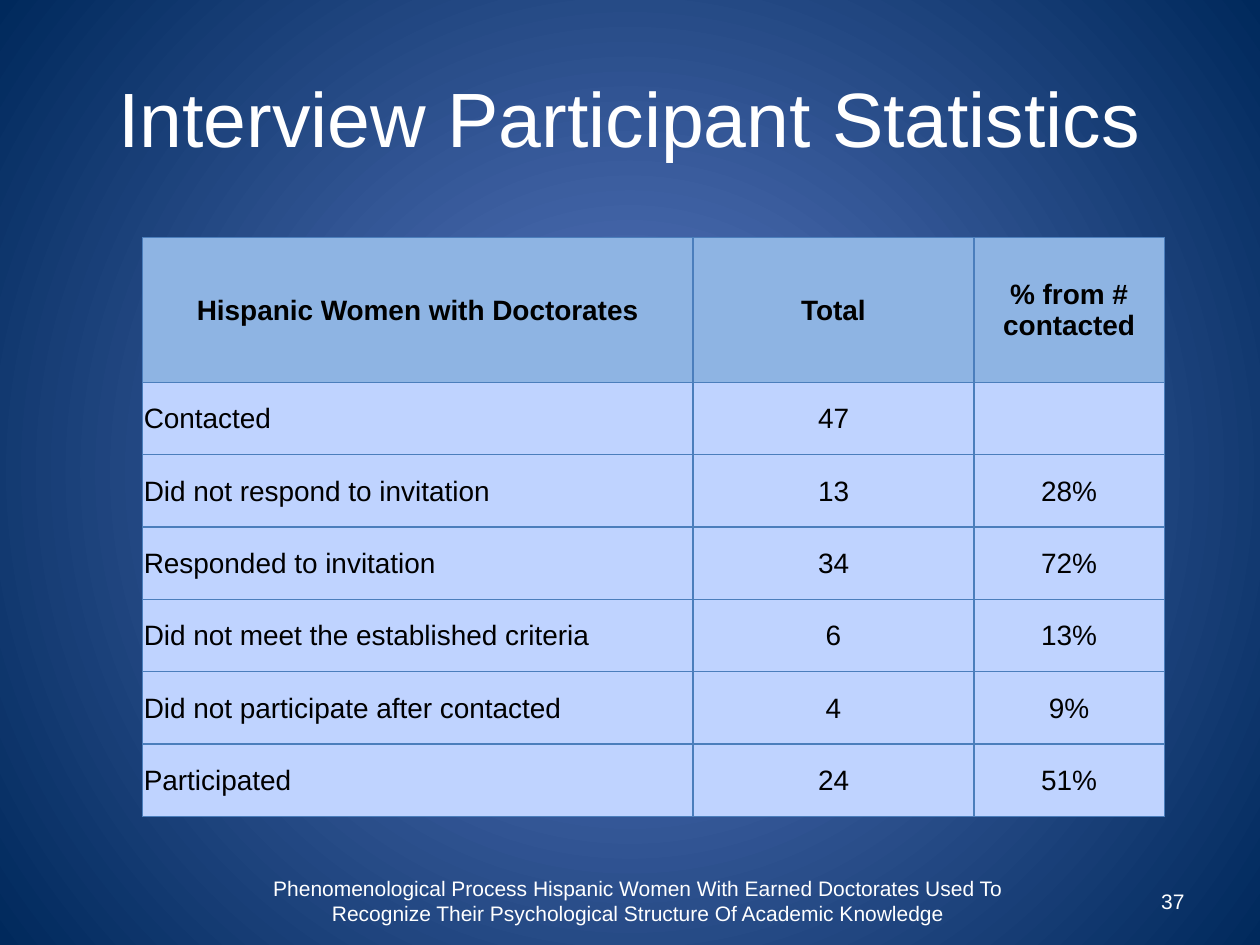
import pptx
import pptx.util
import pptx.dml.color
import pptx.enum.text
import pptx.oxml
import pptx.oxml.ns
import lxml.etree

Pt = pptx.util.Pt
qn = pptx.oxml.ns.qn
ALIGN = pptx.enum.text.PP_ALIGN
MIDDLE = pptx.enum.text.MSO_ANCHOR.MIDDLE

COLORS = {
    "glow": "5E7CC5", "edge": "00295C", "text": "FFFFFF", "ink": "000000",
    "head": "8EB4E3", "body": "BFD3FF", "rule": "4B7EBC",
}
ROWS = [
    ("Hispanic Women with Doctorates", "Total", "% from # contacted"),
    ("Contacted", "47", ""),
    ("Did not respond to invitation", "13", "28%"),
    ("Responded to invitation", "34", "72%"),
    ("Did not meet the established criteria", "6", "13%"),
    ("Did not participate after contacted", "4", "9%"),
    ("Participated", "24", "51%"),
]
WIDTHS = (314.6, 160.6, 108.7)
HEAD, ROW = 82.8, 41.35


def rgb(name):
    return pptx.dml.color.RGBColor.from_string(COLORS[name])


def place(item, box):
    for key, val in zip(("left", "top", "width", "height"), box):
        setattr(item, key, Pt(val))


def write(frame, text, size, color, align, bold=False):
    frame.word_wrap = True
    frame.vertical_anchor = MIDDLE
    par = frame.paragraphs[0]
    par.alignment = align
    run = par.add_run()
    run.text = text
    form = {"name": "Arial", "size": Pt(size), "bold": bold}
    for key, val in form.items():
        setattr(run.font, key, val)
    run.font.color.rgb = rgb(color)


def paint(slide):
    # Radial glow from the centre of the slide
    fill = slide.background.fill
    fill.gradient()
    for stop, (pos, name) in zip(fill.gradient_stops, ((0, "glow"), (1, "edge"))):
        stop.position = pos
        stop.color.rgb = rgb(name)
    grad = next(slide.element.iter(qn("a:gradFill")))
    grad.remove(grad.find(qn("a:lin")))
    shade = lxml.etree.SubElement(grad, qn("a:path"), {"path": "circle"})
    sides = dict.fromkeys("ltrb", "50000")
    lxml.etree.SubElement(shade, qn("a:fillToRect"), sides)


def add_title(slide, box):
    title = slide.shapes.title
    place(title, box)
    write(title.text_frame, "Interview Participant Statistics", 44, "text", ALIGN.CENTER)


def add_note(slide, box, text, align):
    note = slide.shapes.add_textbox(*map(Pt, box))
    write(note.text_frame, text, 12, "text", align)


def rule(cell):
    # Border lines come before the fill in the cell properties
    props = cell._tc.get_or_add_tcPr()
    for spot, side in enumerate("LRTB"):
        line = pptx.oxml.parse_xml(
            f'<a:ln{side} {pptx.oxml.ns.nsdecls("a")} w="9525"><a:solidFill>'
            f'<a:srgbClr val="{COLORS["rule"]}"/></a:solidFill></a:ln{side}>')
        props.insert(spot, line)


def add_stats(slide, box):
    table = slide.shapes.add_table(len(ROWS), len(WIDTHS), *map(Pt, box)).table
    for col, width in zip(table.columns, WIDTHS):
        col.width = Pt(width)
    for r, row in enumerate(ROWS):
        table.rows[r].height = Pt(ROW if r else HEAD)
        for c, text in enumerate(row):
            cell = table.cell(r, c)
            form = {"margin_left": Pt(0.75), "margin_right": Pt(0.75),
                    "margin_top": Pt(0.75), "margin_bottom": 0,
                    "vertical_anchor": MIDDLE}
            for key, val in form.items():
                setattr(cell, key, val)
            cell.fill.solid()
            cell.fill.fore_color.rgb = rgb("body" if r else "head")
            rule(cell)
            if text:
                align = ALIGN.LEFT if r and c == 0 else ALIGN.CENTER
                write(cell.text_frame, text, 16, "ink", align, r == 0)


def main():
    deck = pptx.Presentation()
    deck.slide_width, deck.slide_height = Pt(720), Pt(540)
    slide = deck.slides.add_slide(deck.slide_layouts[5])
    paint(slide)
    add_title(slide, (36, 21.6, 648, 90))
    add_stats(slide, (81.4, 135.7, sum(WIDTHS), HEAD + ROW * (len(ROWS) - 1)))
    # Footer and slide number
    add_note(slide, (122.4, 500.4, 484.6, 28.8),
             "Phenomenological Process Hispanic Women With Earned Doctorates Used To "
             "Recognize Their Psychological Structure Of Academic Knowledge", ALIGN.CENTER)
    add_note(slide, (516.2, 500.4, 167.8, 28.8), "37", ALIGN.RIGHT)
    deck.save("out.pptx")


if __name__ == "__main__":
    main()
